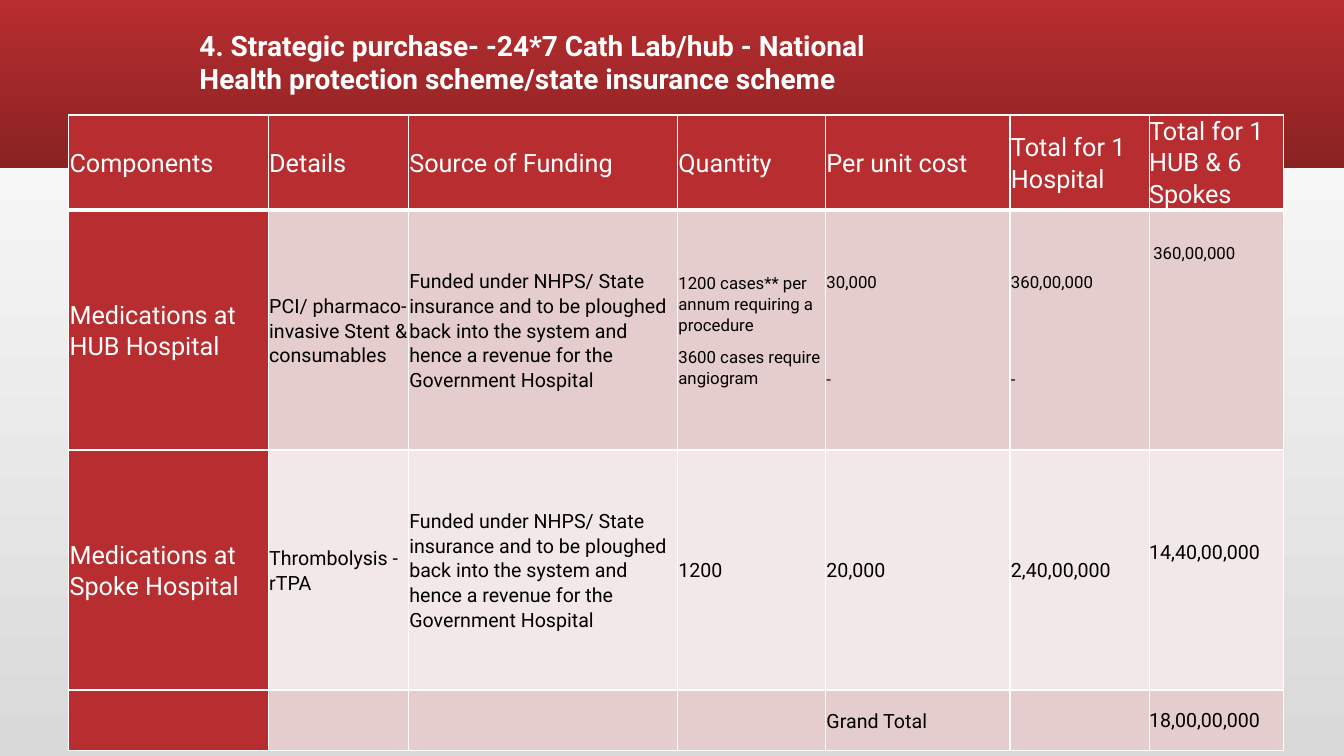
from dataclasses import dataclass

from lxml import etree
from pptx import Presentation
from pptx.dml import color, fill
from pptx.enum import shapes, text
from pptx.oxml import ns
from pptx.util import Pt


@dataclass(frozen=True)
class Theme:
    """Colours, font and type sizes of the slide."""
    font: str = "Roboto"
    red: str = "B82D2F"
    dark_red: str = "8A2223"
    rose: str = "E6CDCD"
    pale_rose: str = "F3E8E8"
    grey: str = "D9D9D9"
    white: str = "FFFFFF"
    black: str = "000000"
    title: int = 20
    heading: int = 18
    body: int = 14
    small: int = 12


T = Theme()
TOP, MIDDLE = text.MSO_ANCHOR.TOP, text.MSO_ANCHOR.MIDDLE


@dataclass(frozen=True)
class CellSpec:
    """Wording, type size and placement of one table cell."""
    words: str = ""
    size: int = T.body
    left: float = 0.7
    top: float = 0.7
    bottom: float = 0
    anchor: text.MSO_ANCHOR = MIDDLE
    gap: float = 8


TITLE = ("4. Strategic purchase- -24*7 Cath Lab/hub - National\n"
         "Health protection scheme/state insurance scheme")
FUNDING = ("Funded under NHPS/ State insurance and to be ploughed back into "
           "the system and hence a revenue for the Government Hospital")
HEADINGS = ("Components", "Details", "Source of Funding", "Quantity",
            "Per unit cost", "Total for 1 Hospital")
COL_WIDTHS = (142.6, 100.1, 192.2, 105.8, 131.8, 99.4, 95.8)
ROW_HEIGHTS = (68, 171.4, 171.4, 43.2)
ROW_FILLS = (T.red, T.rose, T.pale_rose, T.rose)
ROWS = (
    [CellSpec(h, T.heading) for h in HEADINGS]
    + [CellSpec("Total for 1 HUB & 6 Spokes", T.heading, 0, 0, anchor=TOP)],
    [CellSpec("Medications at HUB Hospital", T.heading),
     CellSpec("PCI/ pharmaco-invasive Stent & consumables"),
     CellSpec(FUNDING),
     CellSpec("1200 cases** per annum requiring a procedure\n"
              "3600 cases require angiogram", T.small),
     CellSpec("30,000\n-", T.small, gap=54),
     CellSpec("360,00,000\n-", T.small, gap=54),
     CellSpec("360,00,000", T.small, 3, 23, anchor=TOP)],
    [CellSpec("Medications at Spoke Hospital", T.heading),
     CellSpec("Thrombolysis - rTPA"), CellSpec(FUNDING), CellSpec("1200"),
     CellSpec("20,000"), CellSpec("2,40,00,000"),
     CellSpec("14,40,00,000", left=0, top=0, bottom=25.6)],
    [CellSpec()] * 4 + [CellSpec("Grand Total"), CellSpec(),
                        CellSpec("18,00,00,000", left=0, top=0)],
)


def rgb(value: str) -> color.RGBColor:
    """Return the colour for a hexadecimal value."""
    return color.RGBColor.from_string(value)


def paint_gradient(target: fill.FillFormat, first: str, last: str, angle: int) -> None:
    """Fill the target with a two-colour linear gradient."""
    target.gradient()
    target.gradient_angle = angle
    for stop, value in zip(target.gradient_stops, (first, last)):
        stop.color.rgb = rgb(value)


def format_runs(p, size: int, value: str, bold: bool = False) -> None:
    """Apply the font to every run of a paragraph."""
    for r in p.runs:
        r.font.name = T.font
        r.font.size = Pt(size)
        r.font.bold = bold
        r.font.color.rgb = rgb(value)


def add_border(cell, side: str, width: float) -> None:
    """Add a white border to one side of a cell."""
    tc_pr = cell._tc.get_or_add_tcPr()
    ln = etree.SubElement(tc_pr, ns.qn(f"a:ln{side}"), w=str(int(Pt(width))))
    solid = etree.SubElement(ln, ns.qn("a:solidFill"))
    etree.SubElement(solid, ns.qn("a:srgbClr"), val=T.white)


def fill_cell(cell, spec: CellSpec, row: int, col: int) -> None:
    """Write, format and paint one table cell."""
    for side in "LRTB":
        under_header = (row, side) in ((0, "B"), (1, "T"))
        add_border(cell, side, 3 if under_header else 1)
    on_red = row == 0 or col == 0
    cell.fill.solid()
    cell.fill.fore_color.rgb = rgb(T.red if on_red else ROW_FILLS[row])
    cell.vertical_anchor = spec.anchor
    cell.margin_left = Pt(spec.left)
    cell.margin_right = Pt(min(spec.left, 0.7))
    cell.margin_top, cell.margin_bottom = Pt(spec.top), Pt(spec.bottom)
    tf = cell.text_frame
    tf.text = spec.words
    for p in tf.paragraphs:
        p.line_spacing = 1.07
        p.space_after = Pt(8)
        format_runs(p, spec.size, T.white if on_red else T.black)
    tf.paragraphs[0].space_after = Pt(spec.gap)


def add_cost_table(s) -> None:
    """Add the table of components and costs."""
    table = s.shapes.add_table(
        len(ROWS), len(COL_WIDTHS), Pt(49), Pt(82.1),
        Pt(sum(COL_WIDTHS)), Pt(sum(ROW_HEIGHTS))).table
    table.first_row = table.horz_banding = False
    for column, width in zip(table.columns, COL_WIDTHS):
        column.width = Pt(width)
    for i, (row, height) in enumerate(zip(table.rows, ROW_HEIGHTS)):
        row.height = Pt(height)
        for j, spec in enumerate(ROWS[i]):
            fill_cell(table.cell(i, j), spec, i, j)


def add_title(s) -> None:
    """Add the two-line title over the red band."""
    tf = s.shapes.add_textbox(Pt(135.4), Pt(15.8), Pt(704.2), Pt(77.8)).text_frame
    tf.word_wrap = True
    tf.vertical_anchor = MIDDLE
    tf.margin_bottom = Pt(24.7)
    tf.text = TITLE
    for p in tf.paragraphs:
        format_runs(p, T.title, T.white, bold=True)


def main() -> None:
    """Build the slide and save it."""
    prs = Presentation()
    prs.slide_width, prs.slide_height = Pt(960), Pt(540)
    s = prs.slides.add_slide(prs.slide_layouts[6])
    paint_gradient(s.background.fill, T.grey, T.white, 90)
    band = s.shapes.add_shape(shapes.MSO_SHAPE.RECTANGLE, 0, 0, Pt(960), Pt(120))
    band.shadow.inherit = False
    band.line.fill.background()
    paint_gradient(band.fill, T.red, T.dark_red, 270)
    add_cost_table(s)
    add_title(s)
    prs.save("out.pptx")


if __name__ == "__main__":
    main()
